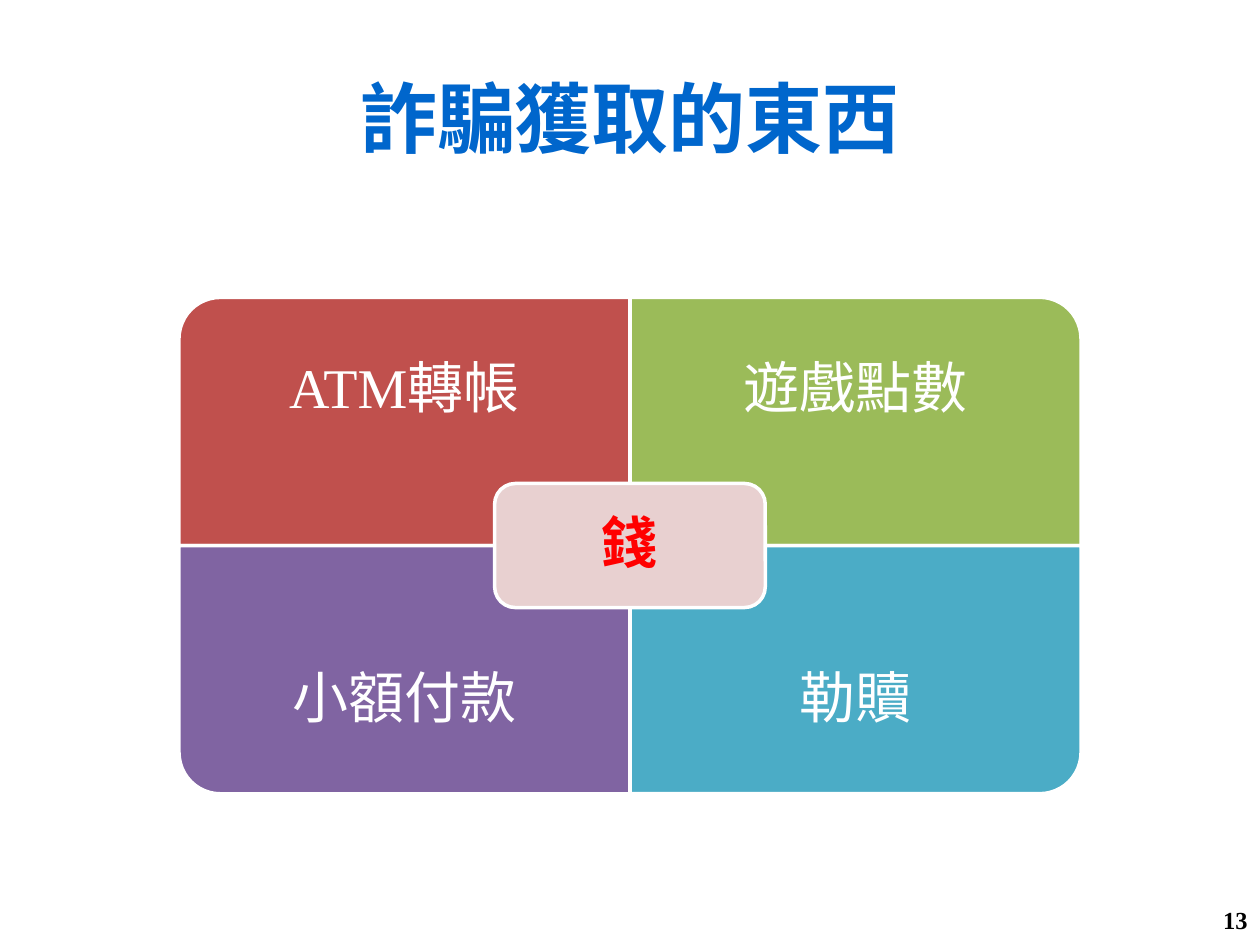
from pptx import Presentation
from pptx.dml.color import RGBColor
from pptx.enum.shapes import MSO_SHAPE
from pptx.enum.text import MSO_ANCHOR, PP_ALIGN
from pptx.util import Inches, Pt

TILE, HUB = MSO_SHAPE.ROUND_1_RECTANGLE, MSO_SHAPE.ROUNDED_RECTANGLE
MIDDLE = MSO_ANCHOR.MIDDLE
CENTER, RIGHT = PP_ALIGN.CENTER, PP_ALIGN.RIGHT
FONT = "Times New Roman"
COLORS = {
    "title": "0066CC", "red": "C0504D", "green": "9BBB59",
    "purple": "8064A2", "teal": "4BACC6", "pink": "E8D0D0",
    "white": "FFFFFF", "money": "FF0000", "black": "000000",
}


def write(shape, text, size, color, bold=False, align=CENTER, pad=0.1, lead=1.0):
    frame = shape.text_frame
    frame.word_wrap = True
    frame.vertical_anchor = MIDDLE
    frame.margin_left = frame.margin_right = Inches(pad)
    frame.margin_top = frame.margin_bottom = Inches(pad if pad > 0.1 else 0.05)
    para = frame.paragraphs[0]
    para.alignment = align
    para.line_spacing = lead
    run = para.add_run()
    run.text = text
    run.font.name = FONT
    run.font.size = Pt(size)
    run.font.bold = bold
    run.font.color.rgb = RGBColor.from_string(COLORS[color])


def block(kind, mid_x, mid_y, wide, high, color, turn=0):
    # A quarter turn swaps the sides of the frame around its centre
    w, h = (high, wide) if turn % 180 else (wide, high)
    shape = slide.shapes.add_shape(
        kind, Inches(mid_x - w / 2), Inches(mid_y - h / 2), Inches(w), Inches(h))
    shape.rotation = turn
    shape.shadow.inherit = False
    shape.fill.solid()
    shape.fill.fore_color.rgb = RGBColor.from_string(COLORS[color])
    shape.line.color.rgb = RGBColor.from_string(COLORS["white"])
    shape.line.width = Pt(2)
    return shape


deck = Presentation()
deck.slide_width, deck.slide_height = Inches(10), Inches(7.5)
slide = deck.slides.add_slide(deck.slide_layouts[5])
for holder in list(slide.placeholders):
    if holder != slide.shapes.title:
        holder.element.getparent().remove(holder.element)

# Title
title = slide.shapes.title
title.left, title.top = Inches(0.5), Inches(0.3)
title.width, title.height = Inches(9), Inches(1.25)
write(title, "詐騙獲取的東西", 44, "title", bold=True)

# Four tiles around the centre, each with its round corner outward
MID_X, MID_Y = 5, 4.33
WIDE, HIGH = 3.58, 1.97
LABEL = HIGH * 0.75
tiles = [
    (-1, -1, 270, "red", "ATM轉帳"),
    (1, -1, 0, "green", "遊戲點數"),
    (-1, 1, 180, "purple", "小額付款"),
    (1, 1, 90, "teal", "勒贖"),
]
for col, row, turn, color, text in tiles:
    x = MID_X + col * WIDE / 2
    block(TILE, x, MID_Y + row * HIGH / 2, WIDE, HIGH, color, turn)
    # The label fills the outer three quarters of its tile
    y = MID_Y + row * (HIGH - LABEL / 2)
    label = slide.shapes.add_textbox(
        Inches(x - WIDE / 2), Inches(y - LABEL / 2), Inches(WIDE), Inches(LABEL))
    write(label, text, 32, "white", pad=0.25, lead=0.9)

# Hub
hub = block(HUB, MID_X, MID_Y, WIDE * 0.6, HIGH / 2, "pink")
write(hub, "錢", 32, "money", bold=True, pad=0.13, lead=0.9)

# Page number
page = slide.shapes.add_textbox(Inches(7.67), Inches(7.1), Inches(2.33), Inches(0.4))
write(page, "13", 14, "black", bold=True, align=RIGHT)

deck.save("out.pptx")
